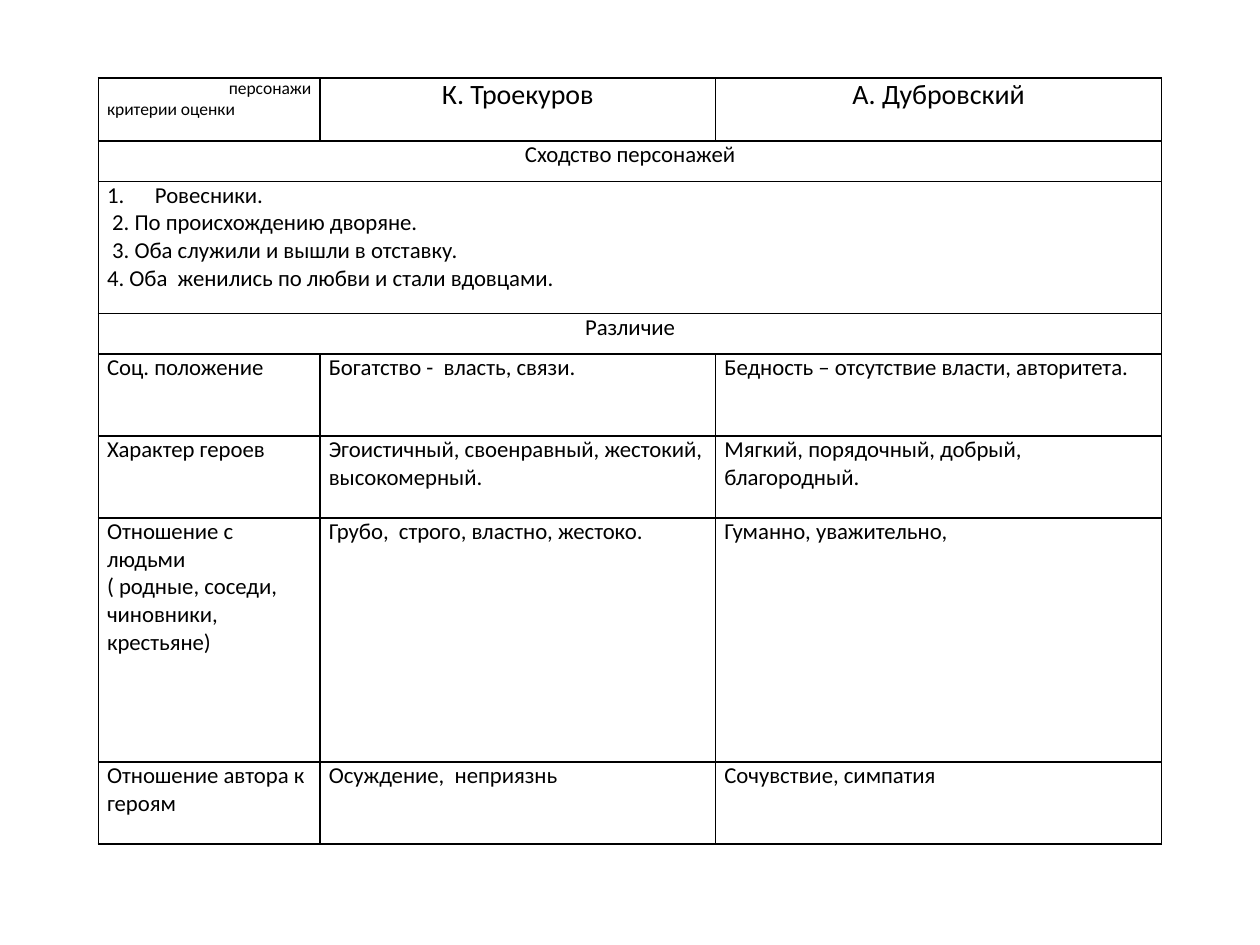
from lxml.etree import SubElement
from pptx import Presentation
from pptx.dml.color import RGBColor
from pptx.enum.text import PP_ALIGN
from pptx.oxml.ns import qn
from pptx.util import Inches, Pt

BLACK = RGBColor(0, 0, 0)
FONT = "Calibri"
BODY_SIZE, HEADING_SIZE, CORNER_SIZE = 13, 16, 10
COLUMN_WIDTHS = [1.76, 3.14, 3.54]
ROW_HEIGHTS = [0.5, 0.32, 1.05, 0.32, 0.65, 0.65, 1.94, 0.65]

CORNER = ["персонажи", "критерии оценки"]
CHARACTERS = ["К. Троекуров", "А. Дубровский"]
SIMILARITIES = [
    "Ровесники.",
    " 2. По происхождению дворяне.",
    " 3. Оба служили и вышли в отставку.",
    "4. Оба  женились по любви и стали вдовцами.",
]
DIFFERENCES = [
    (["Соц. положение"],
     ["Богатство -  власть, связи."],
     ["Бедность – отсутствие власти, авторитета."]),
    (["Характер героев"],
     ["Эгоистичный, своенравный, жестокий, высокомерный."],
     ["Мягкий, порядочный, добрый, благородный."]),
    (["Отношение с людьми", "( родные, соседи, чиновники, крестьяне)"],
     ["Грубо,  строго, властно, жестоко."],
     ["Гуманно, уважительно,"]),
    (["Отношение автора к героям"],
     ["Осуждение,  неприязнь"],
     ["Сочувствие, симпатия"]),
]


def style_cell(cell):
    """Give a cell thin black borders, no fill and tight margins."""
    cell.margin_left = cell.margin_right = Inches(0.07)
    cell.margin_top = cell.margin_bottom = 0
    properties = cell._tc.get_or_add_tcPr()
    for side in ("a:lnL", "a:lnR", "a:lnT", "a:lnB"):
        line = SubElement(properties, qn(side), w=str(Pt(1)))
        fill = SubElement(line, qn("a:solidFill"))
        SubElement(fill, qn("a:srgbClr"), val=str(BLACK))
    cell.fill.background()


def write_cell(cell, lines, size=BODY_SIZE, alignment=PP_ALIGN.LEFT):
    cell.text_frame.text = "\n".join(lines)
    for paragraph in cell.text_frame.paragraphs:
        paragraph.alignment = alignment
        for run in paragraph.runs:
            run.font.name = FONT
            run.font.size = Pt(size)
            run.font.color.rgb = BLACK


def indent_similarities(cell):
    """Hang every line and number the first one automatically."""
    paragraphs = cell.text_frame.paragraphs
    for paragraph in paragraphs:
        properties = paragraph._p.get_or_add_pPr()
        properties.set("marL", str(Inches(0.38)))
        properties.set("indent", str(Inches(-0.38)))
    SubElement(paragraphs[0]._p.get_or_add_pPr(), qn("a:buAutoNum"),
               type="arabicPeriod")


def add_comparison_table(slide, left, top, width, height):
    table = slide.shapes.add_table(len(ROW_HEIGHTS), len(COLUMN_WIDTHS),
                                   left, top, width, height).table
    table.first_row = table.horz_banding = False
    for column, column_width in zip(table.columns, COLUMN_WIDTHS):
        column.width = Inches(column_width)
    for row, row_height in zip(table.rows, ROW_HEIGHTS):
        row.height = Inches(row_height)
    for cell in table.iter_cells():
        style_cell(cell)

    corner = table.cell(0, 0)
    write_cell(corner, CORNER, CORNER_SIZE)
    corner.text_frame.paragraphs[0].alignment = PP_ALIGN.RIGHT
    for index, name in enumerate(CHARACTERS, start=1):
        write_cell(table.cell(0, index), [name], HEADING_SIZE, PP_ALIGN.CENTER)

    for index in (1, 2, 3):
        table.cell(index, 0).merge(table.cell(index, len(COLUMN_WIDTHS) - 1))
    write_cell(table.cell(1, 0), ["Сходство персонажей"],
               alignment=PP_ALIGN.CENTER)
    write_cell(table.cell(2, 0), SIMILARITIES)
    indent_similarities(table.cell(2, 0))
    write_cell(table.cell(3, 0), ["Различие"], alignment=PP_ALIGN.CENTER)

    for row_index, texts in enumerate(DIFFERENCES, start=4):
        for column_index, lines in enumerate(texts):
            write_cell(table.cell(row_index, column_index), lines)


def main():
    presentation = Presentation()
    presentation.slide_width = Inches(10)
    presentation.slide_height = Inches(7.5)
    slide = presentation.slides.add_slide(presentation.slide_layouts[6])
    add_comparison_table(slide, Inches(0.78), Inches(0.62),
                         Inches(sum(COLUMN_WIDTHS)), Inches(sum(ROW_HEIGHTS)))
    presentation.save("out.pptx")


if __name__ == "__main__":
    main()
